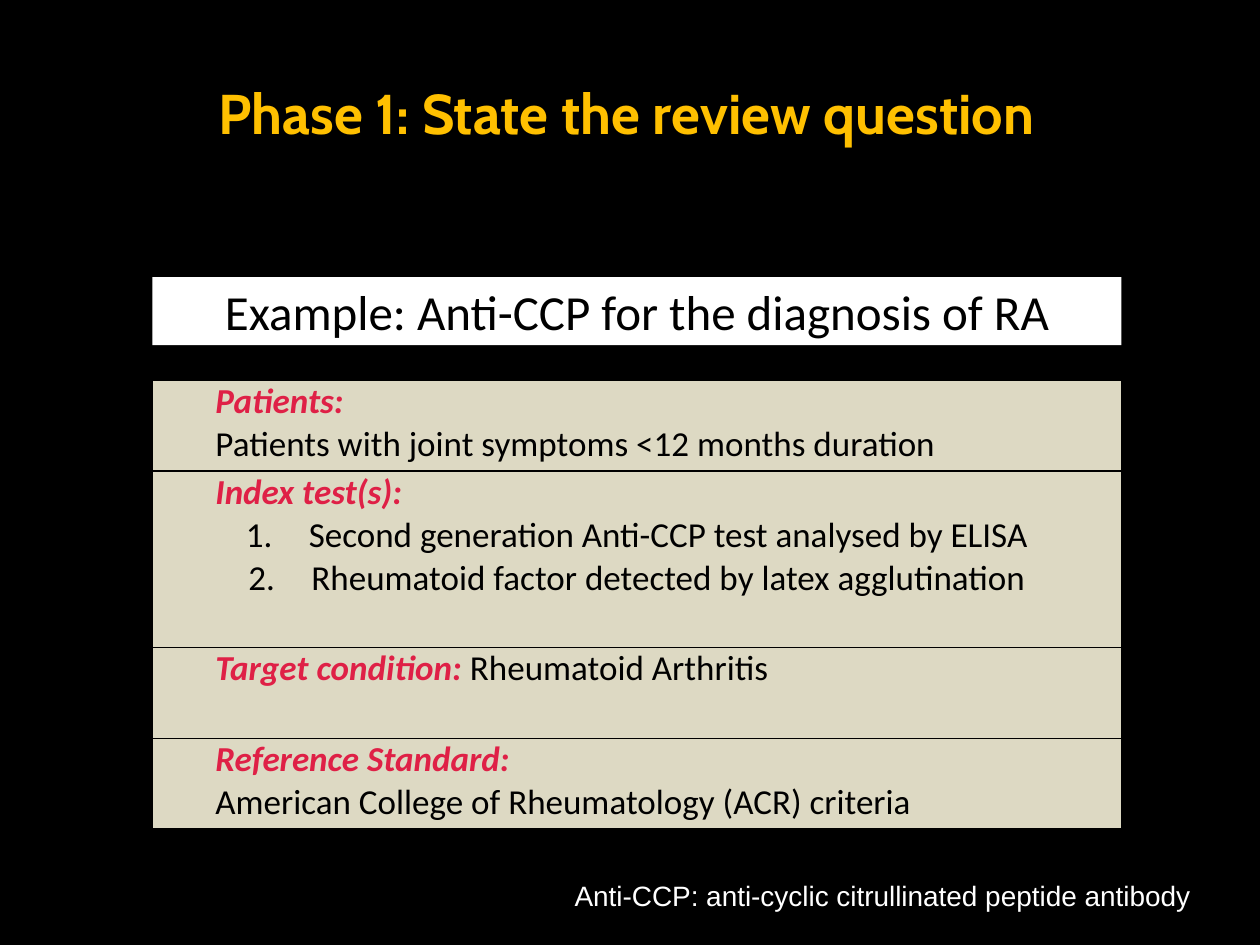
"""Build the review question slide: title, example banner, question table and footnote."""
from dataclasses import dataclass
from typing import Optional

from lxml.etree import SubElement
from pptx import Presentation
from pptx.dml.color import RGBColor
from pptx.enum.shapes import MSO_SHAPE
from pptx.enum.text import MSO_ANCHOR, PP_ALIGN
from pptx.oxml.ns import qn
from pptx.util import Inches, Pt

BLACK = RGBColor(0x00, 0x00, 0x00)
WHITE = RGBColor(0xFF, 0xFF, 0xFF)
GOLD = RGBColor(0xFF, 0xC0, 0x00)
CRIMSON = RGBColor(0xDF, 0x20, 0x46)
SAND = RGBColor(0xDD, 0xD9, 0xC3)

WIDTH, HEIGHT = Inches(10), Inches(7.5)
INSET = Inches(0.05)
INDENT = Inches(0.5)


@dataclass(frozen=True)
class Box:
    """A rectangle in percent of the slide's width and height."""
    left: float
    top: float
    width: float
    height: float

    def emu(self) -> tuple:
        """Return left, top, width and height as lengths."""
        return across(self.left), down(self.top), across(self.width), down(self.height)


@dataclass(frozen=True)
class Style:
    """The look of a run."""
    size: float
    color: RGBColor
    font: str = "Calibri"
    bold: bool = False
    italic: bool = False


@dataclass(frozen=True)
class Line:
    """A table paragraph with an optional heading run and body run."""
    heading: str = ""
    body: str = ""
    numbered: bool = False


@dataclass(frozen=True)
class Row:
    """A table row with its height in percent of the slide."""
    height: float
    lines: tuple


HEADING = Style(20, CRIMSON, bold=True, italic=True)
BODY = Style(20, BLACK)

ROWS = (
    Row(9.6, (Line("Patients:"),
              Line(body="Patients with joint symptoms <12 months duration"))),
    Row(18.67, (Line("Index test(s):"),
                Line(body="Second generation Anti-CCP test analysed by ELISA", numbered=True),
                Line(body="Rheumatoid factor detected by latex agglutination", numbered=True))),
    Row(9.6, (Line("Target condition: ", "Rheumatoid Arthritis"),)),
    Row(9.6, (Line("Reference Standard:"),
              Line(body="American College of Rheumatology (ACR) criteria"))),
)


def across(share: float) -> int:
    """Return a percentage of the slide's width."""
    return round(WIDTH * share / 100)


def down(share: float) -> int:
    """Return a percentage of the slide's height."""
    return round(HEIGHT * share / 100)


def add_run(p, text: str, style: Style) -> None:
    """Add a styled run to a paragraph."""
    r = p.add_run()
    r.text = text
    r.font.size = Pt(style.size)
    r.font.name = style.font
    r.font.bold = style.bold
    r.font.italic = style.italic
    r.font.color.rgb = style.color


def add_label(s, box: Box, text: str, style: Style, align: PP_ALIGN = PP_ALIGN.CENTER,
              anchor: MSO_ANCHOR = MSO_ANCHOR.MIDDLE, fill: Optional[RGBColor] = None,
              top_inset: int = INSET, wrap: bool = True) -> None:
    """Add one line of text, on a filled rectangle if a fill is given."""
    if fill is None:
        sp = s.shapes.add_textbox(*box.emu())
    else:
        sp = s.shapes.add_shape(MSO_SHAPE.RECTANGLE, *box.emu())
        sp.shadow.inherit = False
        sp.fill.solid()
        sp.fill.fore_color.rgb = fill
        sp.line.fill.background()
    tf = sp.text_frame
    tf.word_wrap = wrap
    tf.vertical_anchor = anchor
    tf.margin_left = tf.margin_right = tf.margin_bottom = INSET
    tf.margin_top = top_inset
    p = tf.paragraphs[0]
    p.alignment = align
    add_run(p, text, style)


def set_borders(cell, color: RGBColor, width: float) -> None:
    """Draw the four borders of a cell."""
    tc_pr = cell._tc.get_or_add_tcPr()
    for side in ("a:lnL", "a:lnR", "a:lnT", "a:lnB"):
        ln = SubElement(tc_pr, qn(side), w=str(Pt(width)))
        SubElement(SubElement(ln, qn("a:solidFill")), qn("a:srgbClr"), val=str(color))


def add_line(p, line: Line) -> None:
    """Write a table line, numbered and centred or with a first-line indent."""
    p_pr = p._p.get_or_add_pPr()
    p_pr.set("marL", str(INDENT if line.numbered else 0))
    p_pr.set("indent", str(-INDENT if line.numbered else INDENT))
    if line.numbered:
        p.alignment = PP_ALIGN.CENTER
        SubElement(p_pr, qn("a:buFontTx"))
        SubElement(p_pr, qn("a:buAutoNum"), type="arabicPeriod")
    for text, style in ((line.heading, HEADING), (line.body, BODY)):
        if text:
            add_run(p, text, style)


def add_question_table(s, left: float, top: float, width: float, rows: tuple) -> None:
    """Add the one-column table of the review question."""
    box = Box(left, top, width, sum(row.height for row in rows))
    table = s.shapes.add_table(len(rows), 1, *box.emu()).table
    table.first_row = table.horz_banding = False
    for i, row in enumerate(rows):
        table.rows[i].height = down(row.height)
        cell = table.cell(i, 0)
        cell.margin_left = cell.margin_right = cell.margin_top = cell.margin_bottom = 0
        set_borders(cell, BLACK, 1)
        cell.fill.solid()
        cell.fill.fore_color.rgb = SAND
        tf = cell.text_frame
        for j, line in enumerate(row.lines):
            add_line(tf.add_paragraph() if j else tf.paragraphs[0], line)


def main() -> None:
    """Build and save the slide."""
    prs = Presentation()
    prs.slide_width, prs.slide_height = WIDTH, HEIGHT
    s = prs.slides.add_slide(prs.slide_layouts[6])
    s.background.fill.solid()
    s.background.fill.fore_color.rgb = BLACK
    add_label(s, Box(12.1, 29.33, 76.9, 7.2), "Example: Anti-CCP for the diagnosis of RA",
              Style(28, BLACK), fill=WHITE)
    add_label(s, Box(3.5, 4.8, 92.5, 11.87), "Phase 1: State the review question",
              Style(32, GOLD, "Cabin", bold=True), top_inset=Inches(0.22))
    add_question_table(s, 12.1, 40.27, 76.9, ROWS)
    add_label(s, Box(45.1, 92.27, 50.2, 4.53),
              "Anti-CCP: anti-cyclic citrullinated peptide antibody",
              Style(16, WHITE, "Arial"), PP_ALIGN.LEFT, MSO_ANCHOR.TOP, wrap=False)
    prs.save("out.pptx")


if __name__ == "__main__":
    main()
